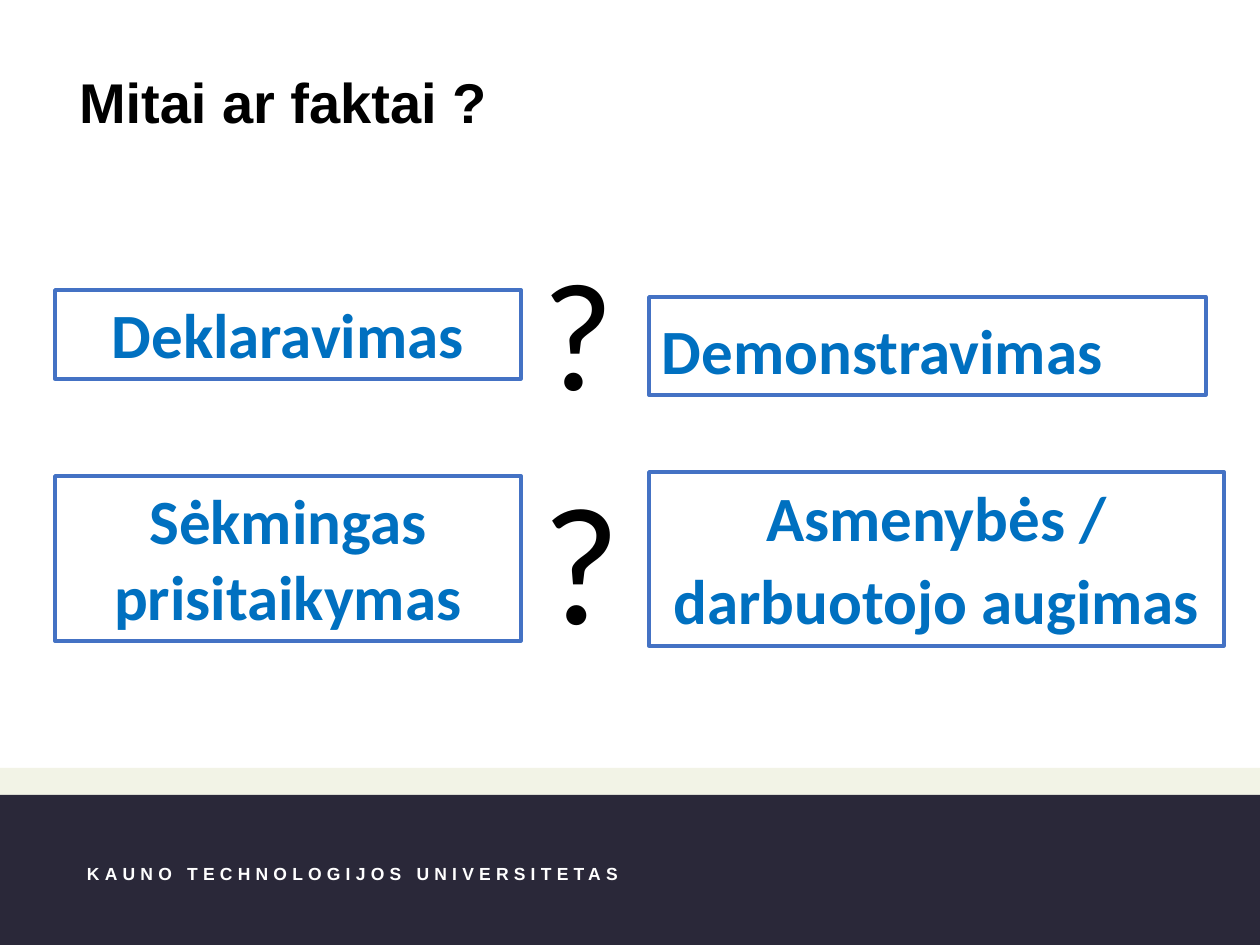
from dataclasses import dataclass, field

from pptx import Presentation
from pptx.dml.color import RGBColor as RGB
from pptx.enum.shapes import MSO_SHAPE as SHAPE
from pptx.enum.text import MSO_ANCHOR as ANCHOR, PP_ALIGN as ALIGN
from pptx.util import Emu, Pt

COLORS = {
    "cream": "F2F3E6",
    "navy": "2A2839",
    "border": "4472C4",
    "blue": "0070C0",
    "black": "000000",
    "white": "FFFFFF",
}


def px(n: int) -> Emu:
    return Emu(round(n * 914400 / 126))


def color(name: str) -> RGB:
    return RGB.from_string(COLORS[name])


@dataclass
class Style:
    font: str
    size: int
    color: str
    bold: bool = True
    wrap: bool = True
    spacing: int = 0  # hundredths of a point
    insets: tuple = (13, 6, 13, 6)  # left, top, right, bottom
    para: dict = field(default_factory=dict)


@dataclass
class Label:
    text: str
    x: int
    y: int
    w: int
    h: int
    style: Style
    framed: bool = False


def term(top: int = 6, **para) -> Style:
    return Style("Calibri", 36, "blue", insets=(13, top, 13, 6), para=para)


def mark(size: int) -> Style:
    return Style("Calibri", size, "black", bold=False)


TITLE = Style("Arial", 32, "black", insets=(0, 0, 13, 6),
              para={"line_spacing": Pt(33)})
FOOTER = Style("Arial", 10, "white", wrap=False, spacing=300,
               insets=(0, 0, 0, 0))

LEFT, MIDDLE, RIGHT = 55, 530, 649
LABELS = [
    Label("KAUNO TECHNOLOGIJOS UNIVERSITETAS", 87, 863, 543, 21, FOOTER),
    Label("Mitai ar faktai ?", 79, 77, 1100, 95, TITLE),
    Label("Deklaravimas", LEFT, 290, 466, 89,
          term(alignment=ALIGN.CENTER), True),
    Label("Demonstravimas", RIGHT, 297, 557, 98,
          term(15, alignment=ALIGN.LEFT), True),
    Label("?", MIDDLE, 231, 120, 199, mark(88)),
    Label("Sėkmingas prisitaikymas", LEFT, 476, 466, 165,
          term(alignment=ALIGN.CENTER), True),
    Label("Asmenybės / darbuotojo augimas", RIGHT, 472, 575, 174,
          term(0, alignment=ALIGN.CENTER, line_spacing=1.09), True),
    Label("?", MIDDLE, 451, 120, 217, mark(96)),
]


def add_band(s, y: int, h: int, fill: str) -> None:
    band = s.shapes.add_shape(SHAPE.RECTANGLE, 0, px(y), px(1260), px(h))
    band.shadow.inherit = False
    band.fill.solid()
    band.fill.fore_color.rgb = color(fill)
    band.line.fill.background()


def add_label(s, label: Label) -> None:
    box = [px(n) for n in (label.x, label.y, label.w, label.h)]
    if label.framed:
        sp = s.shapes.add_shape(SHAPE.RECTANGLE, *box)
        sp.shadow.inherit = False
        sp.fill.background()
        sp.line.color.rgb = color("border")
        sp.line.width = Pt(2)
    else:
        sp = s.shapes.add_textbox(*box)

    style, tf = label.style, sp.text_frame
    left, top, right, bottom = (px(n) for n in style.insets)
    frame = {"word_wrap": style.wrap, "vertical_anchor": ANCHOR.TOP,
             "margin_left": left, "margin_top": top,
             "margin_right": right, "margin_bottom": bottom}
    p = tf.paragraphs[0]
    r = p.add_run()
    r.text = label.text
    font = {"name": style.font, "size": Pt(style.size), "bold": style.bold}
    para = {"alignment": ALIGN.LEFT} | style.para
    for target, values in ((tf, frame), (p, para), (r.font, font)):
        for name, value in values.items():
            setattr(target, name, value)
    r.font.color.rgb = color(style.color)
    if style.spacing:
        r.font._element.set("spc", str(style.spacing))


def main() -> None:
    prs = Presentation()
    prs.slide_width, prs.slide_height = px(1260), px(945)
    s = prs.slides.add_slide(prs.slide_layouts[6])
    add_band(s, 768, 177, "cream")
    add_band(s, 795, 150, "navy")
    for label in LABELS:
        add_label(s, label)
    prs.save("out.pptx")


if __name__ == "__main__":
    main()
